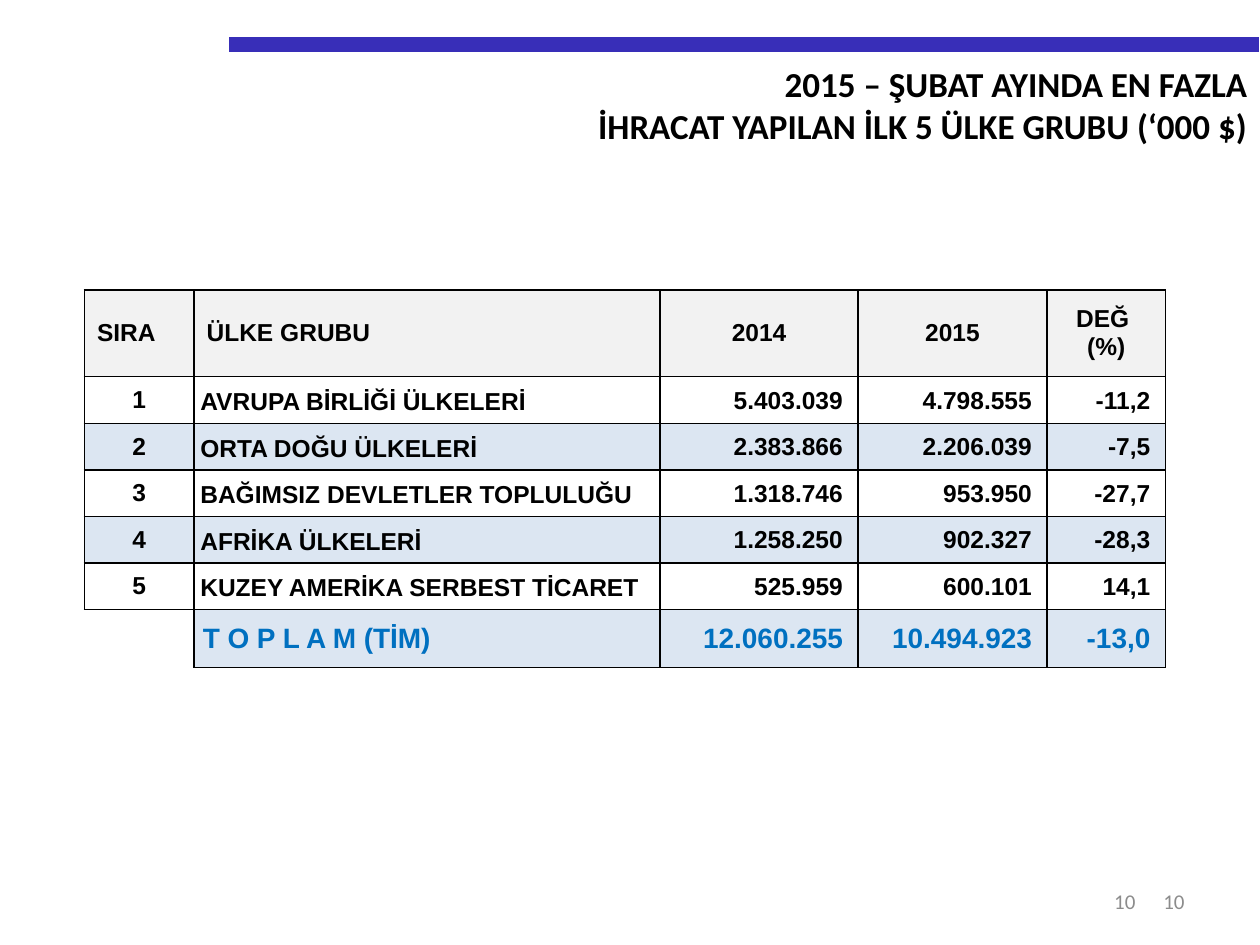
"""Builds the slide on the top five export country groups of February 2015."""
from dataclasses import dataclass

from lxml.etree import SubElement
from pptx import Presentation
from pptx.dml.color import RGBColor
from pptx.enum.shapes import MSO_CONNECTOR
from pptx.enum.text import MSO_ANCHOR, PP_ALIGN
from pptx.oxml.ns import qn
from pptx.util import Inches, Pt


@dataclass(frozen=True)
class Theme:
    ink: str = "000000"
    rule: str = "382EB8"
    page: str = "8C8C8C"
    head: str = "F2F2F2"
    band: str = "DCE6F2"
    total: str = "0070C0"
    text_font: str = "Calibri"
    table_font: str = "Arial"
    title_size: int = 20
    page_size: int = 12
    cell_size: int = 14
    total_size: int = 16
    rule_width: float = 8.5
    border_width: float = 1


TITLE = ["2015 – ŞUBAT AYINDA EN FAZLA", "İHRACAT YAPILAN İLK 5 ÜLKE GRUBU (‘000 $)"]
COLS = [0.87, 3.7, 1.57, 1.5, 0.94]
ROWS = [0.69] + [0.37] * 5 + [0.46]
HEADER = ["SIRA", "ÜLKE GRUBU", "2014", "2015", "DEĞ \n(%)"]
GROUPS = [
    ["1", "AVRUPA BİRLİĞİ ÜLKELERİ", "5.403.039", "4.798.555", "-11,2"],
    ["2", "ORTA DOĞU ÜLKELERİ", "2.383.866", "2.206.039", "-7,5"],
    ["3", "BAĞIMSIZ DEVLETLER TOPLULUĞU", "1.318.746", "953.950", "-27,7"],
    ["4", "AFRİKA ÜLKELERİ", "1.258.250", "902.327", "-28,3"],
    ["5", "KUZEY AMERİKA SERBEST TİCARET", "525.959", "600.101", "14,1"],
]
TOTAL = ["", "T O P L A M (TİM)", "12.060.255", "10.494.923", "-13,0"]

DEFAULT_INSETS = (0.1, 0.05, 0.1, 0.05)
NAME_INSETS = (0.05, 0, 0.05, 0)
TOTAL_INSETS = (0.07, 0.01, 0.01, 0)
NUMBER_INSETS = (0.01, 0.01, 0.12, 0)


class SlideBuilder:
    def __init__(self, slide, theme):
        self.s = slide
        self.theme = theme

    def style(self, p, font, size, color, bold, align):
        p.alignment = align
        p.font.name = font
        p.font.size = Pt(size)
        p.font.bold = bold
        p.font.color.rgb = RGBColor.from_string(color)

    def line(self, x1, y1, x2, y2):
        ln = self.s.shapes.add_connector(
            MSO_CONNECTOR.STRAIGHT, Inches(x1), Inches(y1), Inches(x2), Inches(y2))
        ln.line.color.rgb = RGBColor.from_string(self.theme.rule)
        ln.line.width = Pt(self.theme.rule_width)
        SubElement(ln._element.spPr, qn("a:effectLst"))

    def text(self, x, y, w, h, lines, size, color, bold=False, anchor=MSO_ANCHOR.TOP):
        sp = self.s.shapes.add_textbox(Inches(x), Inches(y), Inches(w), Inches(h))
        tf = sp.text_frame
        tf.word_wrap = True
        tf.vertical_anchor = anchor
        tf.text = "\n".join(lines)
        for p in tf.paragraphs:
            self.style(p, self.theme.text_font, size, color, bold, PP_ALIGN.RIGHT)

    def borders(self, cell, sides):
        tc_pr = cell._tc.get_or_add_tcPr()
        for side in "LRTB":
            ln = SubElement(tc_pr, qn(f"a:ln{side}"), w=str(Pt(self.theme.border_width)))
            if side in sides:
                fill = SubElement(ln, qn("a:solidFill"))
                SubElement(fill, qn("a:srgbClr"), val=self.theme.ink)
            else:
                SubElement(ln, qn("a:noFill"))

    def cell(self, cell, text, align, insets, fill, size, color, spacing=None, sides="LRTB"):
        self.borders(cell, sides)
        if fill:
            cell.fill.solid()
            cell.fill.fore_color.rgb = RGBColor.from_string(fill)
        else:
            cell.fill.background()
        cell.vertical_anchor = MSO_ANCHOR.MIDDLE
        cell.margin_left, cell.margin_top, cell.margin_right, cell.margin_bottom = map(Inches, insets)
        cell.text = text
        for p in cell.text_frame.paragraphs:
            self.style(p, self.theme.table_font, size, color, True, align)
            p.line_spacing = spacing

    def table(self, x, y):
        th = self.theme
        rows = [HEADER, *GROUPS, TOTAL]
        table = self.s.shapes.add_table(
            len(rows), len(COLS), Inches(x), Inches(y), Inches(sum(COLS)), Inches(sum(ROWS))).table
        table.first_row = table.horz_banding = False
        for col, width in zip(table.columns, COLS):
            col.width = Inches(width)
        for row, height in zip(table.rows, ROWS):
            row.height = Inches(height)

        left, center, right = PP_ALIGN.LEFT, PP_ALIGN.CENTER, PP_ALIGN.RIGHT
        for c, text in enumerate(HEADER):
            self.cell(table.cell(0, c), text, left if c < 2 else center,
                      DEFAULT_INSETS, th.head, th.cell_size, th.ink)
        aligns = [center, left, right, right, right]
        insets = [DEFAULT_INSETS, NAME_INSETS] + [NUMBER_INSETS] * 3
        for r, group in enumerate(GROUPS, 1):
            fill = th.band if r % 2 == 0 else None
            for c, text in enumerate(group):
                self.cell(table.cell(r, c), text, aligns[c], insets[c], fill,
                          th.cell_size, th.ink, 1.15 if c == 1 else None)
        insets[1] = TOTAL_INSETS
        for c, text in enumerate(TOTAL):
            self.cell(table.cell(len(rows) - 1, c), text, aligns[c], insets[c],
                      th.band if text else None, th.total_size, th.total,
                      sides="LRTB" if text else "RT")


def main():
    prs = Presentation()
    prs.slide_width, prs.slide_height = Inches(10), Inches(7.5)
    theme = Theme()
    b = SlideBuilder(prs.slides.add_slide(prs.slide_layouts[6]), theme)
    b.line(1.82, 0.35, 9.99, 0.35)
    for x, width in [(7.17, 2.33), (7.01, 2.1)]:
        b.text(x, 6.95, width, 0.4, ["10"], theme.page_size, theme.page, anchor=MSO_ANCHOR.MIDDLE)
    b.text(1.06, 0.45, 8.94, 0.77, TITLE, theme.title_size, theme.ink, bold=True)
    b.table(0.67, 2.3)
    prs.save("out.pptx")


if __name__ == "__main__":
    main()
